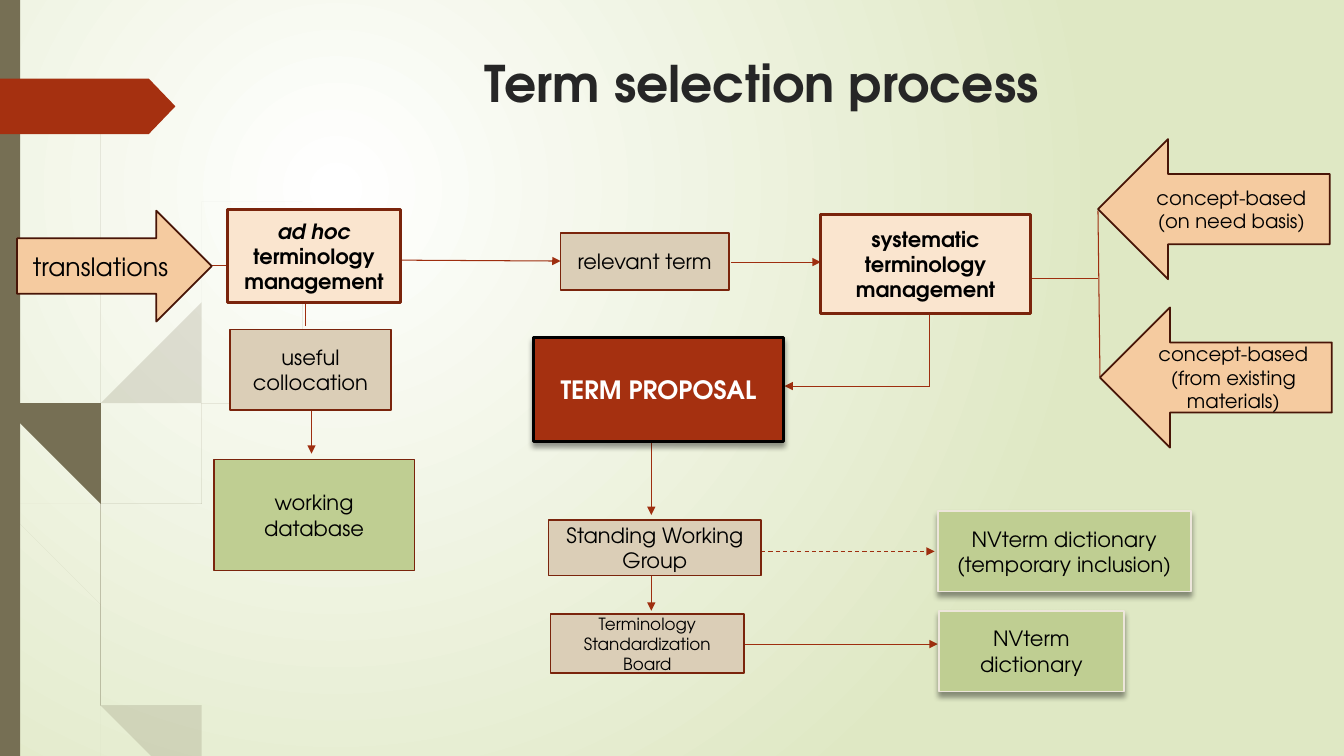
"""Build the term selection process slide."""
from dataclasses import dataclass

from lxml.etree import SubElement
from pptx import Presentation
from pptx.dml.color import RGBColor
from pptx.enum.dml import MSO_LINE
from pptx.enum.shapes import MSO_CONNECTOR, MSO_SHAPE as Preset
from pptx.enum.text import MSO_ANCHOR, PP_ALIGN
from pptx.oxml.ns import qn
from pptx.slide import Slide
from pptx.util import Inches, Pt

Point = tuple[float, float]


@dataclass(frozen=True)
class Theme:
    font: str = "TeX Gyre Adventor"
    ink: str = "000000"
    title_ink: str = "262626"
    white: str = "FFFFFF"
    meadow: str = "DFE8C4"
    olive: str = "766F54"
    rust: str = "A53010"
    border: str = "7A240C"
    arrow_border: str = "481507"
    pale_border: str = "EDE6DB"
    link: str = "9E2E0F"
    peach: str = "F5CBA0"
    cream: str = "FAE5CF"
    sand: str = "DBCEB7"
    green: str = "BFCE92"
    title_size: float = 36
    large: float = 18
    body: float = 15
    note: float = 14
    small: float = 12


THEME = Theme()


@dataclass(frozen=True)
class Step:
    text: tuple[str, ...]
    at: tuple[float, float, float, float]
    fill: str
    border: str = THEME.border
    weight: float = 1.25
    size: float = THEME.body
    ink: str = THEME.ink
    bold: bool = False
    italic_lead: str = ""
    raised: bool = False
    preset: Preset = Preset.RECTANGLE


@dataclass(frozen=True)
class Link:
    start: Point
    end: Point
    arrow: bool = True
    dashed: bool = False


@dataclass(frozen=True)
class Strand:
    down: tuple[Point, ...]
    up: tuple[Point, ...]
    opacity: int = 100


STRANDS = (
    Strand(((0, 2.99), (0.11, 3.5), (0.28, 4.7), (0.65, 6.21), (0.92, 6.93), (1.14, 7.5)),
           ((1.24, 7.5), (1.05, 7.11), (0.93, 6.83), (0.7, 6.19), (0.31, 4.69), (0.17, 3.76),
            (0.09, 3.22), (0, 2.82)), 20),
    Strand(((0.14, 3.45), (0.17, 3.76), (0.58, 5.22), (0.84, 5.99), (1.23, 6.94), (1.5, 7.5)),
           ((1.55, 7.5), (1.27, 6.92), (0.92, 6.07), (0.62, 5.2), (0.14, 3.45)), 20),
    Strand(((3.12, 1.53), (2.68, 1.97), (2.28, 2.44), (1.58, 3.48), (1.07, 4.61), (0.85, 5.84),
            (0.87, 6.46), (0.93, 6.83)),
           ((1.05, 7.11), (0.91, 6.46), (0.88, 5.84), (1.1, 4.62), (1.6, 3.49), (2.29, 2.45),
            (2.68, 1.98), (3.12, 1.54)), 20),
    Strand(((0.03, 0), (0.07, 1.1), (0.17, 2.33), (0.33, 3.55), (0.57, 4.77), (0.68, 5.57),
            (0.93, 6.59), (1.17, 7.22), (1.27, 7.49)),
           ((1.36, 7.49), (1.22, 7.19), (0.98, 6.57), (0.72, 5.56), (0.55, 4.53), (0.36, 3.55),
            (0.19, 2.32), (0.08, 1.09), (0.04, 0))),
    Strand(((0.7, 1.41), (0.62, 1.93), (0.56, 2.45), (0.52, 3.49), (0.55, 4.49), (0.64, 5.05),
            (0.88, 5.92), (1.11, 6.56), (1.32, 7.08), (1.52, 7.49)),
           ((1.57, 7.49), (1.36, 7.06), (1.1, 6.41), (0.93, 5.9), (0.6, 4.72), (0.54, 3.49),
            (0.58, 2.45), (0.63, 1.93), (0.7, 1.41))),
    Strand(((2.6, 3.44), (2.31, 3.73), (2.04, 4.05), (1.56, 4.74), (1.22, 5.51), (1.06, 6.31),
            (1.1, 6.91)),
           ((1.22, 7.19), (1.11, 6.56), (1.11, 6.33), (1.25, 5.52), (1.58, 4.76), (2.05, 4.06),
            (2.31, 3.74), (2.61, 3.44))),
)

LINKS = (
    Link((3.03, 2.97), (3.03, 3.23), arrow=False),
    Link((3.09, 4.07), (3.09, 4.5)),
    Link((3.82, 2.58), (5.56, 2.59)),
    Link((9.22, 3.11), (9.22, 3.83), arrow=False),
    Link((9.22, 3.83), (7.78, 3.83)),
    Link((6.46, 4.28), (6.46, 5.11)),
    Link((6.46, 5.71), (6.46, 6.06)),
    Link((7.39, 6.39), (9.3, 6.39)),
    Link((7.55, 5.47), (9.27, 5.47), dashed=True),
    Link((7.25, 2.6), (8.14, 2.6)),
    Link((10.89, 2.09), (10.91, 3.74), arrow=False),
    Link((10.89, 2.76), (10.21, 2.76), arrow=False),
    Link((2.27, 2.63), (1.86, 2.63), arrow=False),
)

STEPS = (
    Step(("concept-based (on need basis)",), (10.89, 1.38, 2.3, 1.39), THEME.peach,
         THEME.arrow_border, size=THEME.note, preset=Preset.LEFT_ARROW),
    Step(("concept-based", "(from existing materials)"), (10.91, 3.05, 2.3, 1.39), THEME.peach,
         THEME.arrow_border, size=THEME.note, preset=Preset.LEFT_ARROW),
    Step(("translations",), (0.17, 2.09, 1.93, 1.1), THEME.peach,
         THEME.arrow_border, size=THEME.large, preset=Preset.RIGHT_ARROW),
    Step(("terminology management",), (2.26, 2.08, 1.71, 0.92), THEME.cream,
         weight=2.25, bold=True, italic_lead="ad hoc "),
    Step(("systematic terminology management",), (8.14, 2.13, 2.08, 0.98), THEME.cream,
         weight=2.25, bold=True),
    Step(("TERM PROPOSAL",), (5.29, 3.35, 2.48, 1.03), THEME.rust, THEME.ink, 2.25,
         THEME.large, THEME.white, bold=True, raised=True),
    Step(("relevant term",), (5.56, 2.31, 1.67, 0.57), THEME.sand),
    Step(("useful collocation",), (2.28, 3.27, 1.6, 0.8), THEME.sand),
    Step(("Standing Working Group",), (5.44, 5.16, 2.11, 0.55), THEME.sand),
    Step(("Terminology Standardization Board",), (5.46, 6.09, 1.92, 0.59), THEME.sand,
         size=THEME.small),
    Step(("working database",), (2.12, 4.56, 1.99, 1.1), THEME.green),
    Step(("NVterm dictionary", "(temporary inclusion)"), (9.3, 5.07, 2.51, 0.8), THEME.green,
         THEME.pale_border, raised=True),
    Step(("NVterm dictionary",), (9.31, 6.06, 1.84, 0.8), THEME.green,
         THEME.pale_border, raised=True),
)


def rgb(value: str) -> RGBColor:
    """Turn a hex string into a colour."""
    return RGBColor.from_string(value)


def paint_background(slide: Slide) -> None:
    """Fill the slide with a glow centred in its upper left part."""
    fill = slide.background.fill
    fill.gradient()
    for stop, colour in zip(fill.gradient_stops, (THEME.white, THEME.meadow)):
        stop.color.rgb = rgb(colour)
    linear = next(slide.element.iter(qn("a:lin")))
    gradient = linear.getparent()
    gradient.remove(linear)
    glow = SubElement(gradient, qn("a:path"), path="circle")
    SubElement(glow, qn("a:fillToRect"), l="50000", t="50000", r="100000", b="100000")


def smooth(edge: tuple[Point, ...], pieces: int = 6) -> list[Point]:
    """Sample a Catmull-Rom curve through the points of an edge."""
    padded = (edge[0], *edge, edge[-1])
    curve = [edge[0]]
    for a, b, c, d in zip(padded, padded[1:], padded[2:], padded[3:]):
        for t in (i / pieces for i in range(1, pieces + 1)):
            curve.append(tuple(
                q + t * (r - p) / 2 + t * t * (2 * p - 5 * q + 4 * r - s) / 2
                + t ** 3 * (3 * q - p - 3 * r + s) / 2
                for p, q, r, s in zip(a, b, c, d)))
    return curve


def draw_strand(slide: Slide, strand: Strand) -> None:
    """Draw one tapering blade of grass."""
    outline = smooth(strand.down) + smooth(strand.up)
    builder = slide.shapes.build_freeform(*outline[0], scale=Inches(1))
    builder.add_line_segments(outline[1:], close=True)
    blade = builder.convert_to_shape()
    blade.shadow.inherit = False
    blade.fill.solid()
    blade.fill.fore_color.rgb = rgb(THEME.olive)
    blade.line.fill.background()
    if strand.opacity < 100:
        colour = next(blade.element.spPr.iter(qn("a:srgbClr")))
        SubElement(colour, qn("a:alpha"), val=str(strand.opacity * 1000))


def draw_step(slide: Slide, step: Step) -> None:
    """Draw one labelled step of the process."""
    shape = slide.shapes.add_shape(step.preset, *map(Inches, step.at))
    shape.shadow.inherit = False
    shape.fill.solid()
    shape.fill.fore_color.rgb = rgb(step.fill)
    shape.line.color.rgb = rgb(step.border)
    shape.line.width = Pt(step.weight)
    if step.raised:
        effects = shape.element.spPr.find(qn("a:effectLst"))
        shade = SubElement(effects, qn("a:outerShdw"), blurRad=str(Pt(4)), dist=str(Pt(3)),
                           dir="5400000", rotWithShape="0")
        colour = SubElement(shade, qn("a:srgbClr"), val=THEME.ink)
        SubElement(colour, qn("a:alpha"), val="40000")
    frame = shape.text_frame
    frame.word_wrap = True
    frame.vertical_anchor = MSO_ANCHOR.MIDDLE
    for index, line in enumerate(step.text):
        paragraph = frame.add_paragraph() if index else frame.paragraphs[0]
        paragraph.alignment = PP_ALIGN.CENTER
        if step.italic_lead:
            lead = paragraph.add_run()
            lead.text, lead.font.italic = step.italic_lead, True
        paragraph.add_run().text = line
        style_font(paragraph.font, step.size, step.ink, step.bold)


def style_font(font, size: float, ink: str, bold: bool) -> None:
    """Apply the theme typeface with a size, colour and weight."""
    font.name, font.size, font.bold = THEME.font, Pt(size), bold
    font.color.rgb = rgb(ink)


def draw_link(slide: Slide, link: Link) -> None:
    """Draw one connecting line."""
    connector = slide.shapes.add_connector(
        MSO_CONNECTOR.STRAIGHT, *map(Inches, link.start + link.end))
    connector.line.color.rgb = rgb(THEME.link)
    connector.line.width = Pt(0.75)
    if link.dashed:
        connector.line.dash_style = MSO_LINE.DASH
    properties = connector.element.spPr
    if link.arrow:
        SubElement(properties.find(qn("a:ln")), qn("a:tailEnd"), type="triangle")
    SubElement(properties, qn("a:effectLst"))


def draw_band(slide: Slide, preset: Preset, at: tuple[float, ...], colour: str):
    """Draw one borderless decoration on the left edge."""
    band = slide.shapes.add_shape(preset, *map(Inches, at))
    band.shadow.inherit = False
    band.fill.solid()
    band.fill.fore_color.rgb = rgb(colour)
    band.line.fill.background()
    return band


def write_title(slide: Slide) -> None:
    """Place and format the slide title."""
    title = slide.shapes.title
    title.left, title.top, title.width, title.height = map(Inches, (2.68, 0.47, 9.75, 1.4))
    title.text_frame.text = "Term selection process"
    title.text_frame.vertical_anchor = MSO_ANCHOR.TOP
    heading = title.text_frame.paragraphs[0]
    heading.alignment = PP_ALIGN.CENTER
    style_font(heading.font, THEME.title_size, THEME.title_ink, True)


def main() -> None:
    """Assemble and save the slide."""
    deck = Presentation()
    deck.slide_width, deck.slide_height = Inches(13.33), Inches(7.5)
    slide = deck.slides.add_slide(deck.slide_layouts[5])
    paint_background(slide)
    write_title(slide)
    for strand in STRANDS:
        draw_strand(slide, strand)
    draw_band(slide, Preset.RECTANGLE, (0, 0, 0.2, 7.5), THEME.olive)
    pointer = draw_band(slide, Preset.PENTAGON, (0, 0.78, 1.74, 0.55), THEME.rust)
    pointer.adjustments[0] = 0.48
    for link in LINKS:
        draw_link(slide, link)
    for step in STEPS:
        draw_step(slide, step)
    deck.save("out.pptx")


if __name__ == "__main__":
    main()
